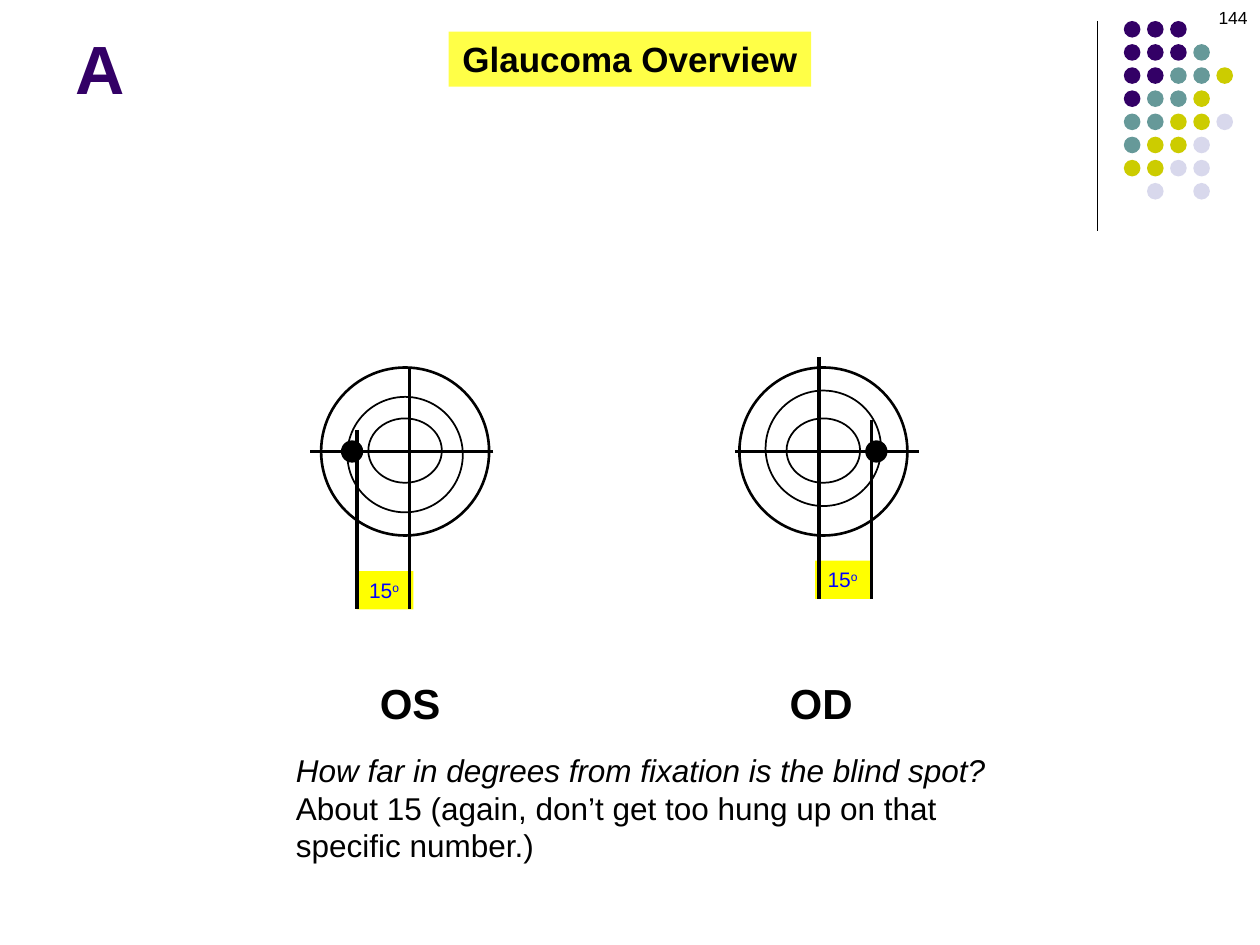
from lxml.etree import SubElement
from pptx import Presentation
from pptx.dml.color import RGBColor
from pptx.enum.shapes import MSO_CONNECTOR as Connector, MSO_SHAPE as Shape
from pptx.enum.text import MSO_ANCHOR as Anchor, MSO_AUTO_SIZE as AutoSize, PP_ALIGN as Align
from pptx.oxml.ns import qn
from pptx.util import Pt

THEME = {
    "font": "Arial", "ink": "000000", "purple": "330066", "teal": "669999",
    "olive": "CCCC00", "mist": "D8D8EC", "yellow": "FFFF00", "banner": "FFFF47",
    "blue": "0000FF",
    "title": 39, "eye": 24, "heading": 20, "body": 18, "angle": 12, "number": 10,
}

TITLE, HEADING, PAGE_NUMBER = "A", "Glaucoma Overview", "144"
QUESTION = "How far in degrees from fixation is the blind spot?"
ANSWER = "About 15 (again, don’t get too hung up on that specific number.)"
ANGLE, DEGREE = "15", "o"

# side is -1 where the blind spot lies left of fixation, +1 where it lies right
EYES = [
    {"name": "OS", "side": -1, "axis": 234, "rise": 0, "name_box": (210, 383.8, 50, 36.4)},
    {"name": "OD", "side": 1, "axis": 468, "rise": 6, "name_box": (444.2, 383.8, 51, 36.4)},
]
MERIDIAN = 258

DOT_COLOURS = {"P": "purple", "T": "teal", "O": "olive", "M": "mist"}
DOT_ROWS = ["PPP", "PPPT", "PPTTO", "PTTO", "TTOOM", "TOOM", "OOMM", " M M"]
DOT_LEFT, DOT_TOP, DOT_STEP, DOT_SIZE = 642.2, 12, 13.22, 9.5


def colour(name):
    return RGBColor.from_string(THEME[name])


def points(*lengths):
    return [Pt(length) for length in lengths]


def add_line(page, start, end, weight=2.25):
    line = page.shapes.add_connector(Connector.STRAIGHT, *points(*start, *end))
    line.line.color.rgb = colour("ink")
    line.line.width = Pt(weight)
    SubElement(line._element.spPr, qn("a:effectLst"))


def add_filled(page, kind, frame, fill=None, weight=0):
    shape = page.shapes.add_shape(kind, *points(*frame))
    shape.shadow.inherit = False
    if fill:
        shape.fill.solid()
        shape.fill.fore_color.rgb = colour(fill)
    else:
        shape.fill.background()
    if weight:
        shape.line.color.rgb = colour("ink")
        shape.line.width = Pt(weight)
    else:
        shape.line.fill.background()
    return shape


def add_ellipse(page, centre, width, height, **style):
    x, y = centre
    add_filled(page, Shape.OVAL, (x - width / 2, y - height / 2, width, height), **style)


def write(box, paragraphs, size, ink="ink", bold=False, align=Align.LEFT,
          anchor=Anchor.TOP, wrap=False, grow=True):
    """Fill box with paragraphs, each a list of (text, format) spans."""
    frame = box.text_frame
    frame.word_wrap = wrap
    frame.auto_size = AutoSize.SHAPE_TO_FIT_TEXT if grow else AutoSize.NONE
    frame.vertical_anchor = anchor
    for index, spans in enumerate(paragraphs):
        para = frame.add_paragraph() if index else frame.paragraphs[0]
        para.alignment = align
        for text, style in spans:
            span = para.add_run()
            span.text = text
            font = span.font
            font.name, font.size, font.bold = THEME["font"], Pt(THEME[size]), bold
            font.italic = style == "italic"
            font.color.rgb = colour(ink)
            if style == "superscript":
                span._r.get_or_add_rPr().set("baseline", "30000")


def add_text(page, frame, paragraphs, **style):
    write(page.shapes.add_textbox(*points(*frame)), paragraphs, **style)


def add_dots(page):
    for row, letters in enumerate(DOT_ROWS):
        for column, letter in enumerate(letters):
            if letter in DOT_COLOURS:
                frame = (DOT_LEFT + column * DOT_STEP, DOT_TOP + row * DOT_STEP,
                         DOT_SIZE, DOT_SIZE)
                add_filled(page, Shape.OVAL, frame, fill=DOT_COLOURS[letter])


def add_visual_field(page, eye):
    side, axis, rise = eye["side"], eye["axis"], eye["rise"]
    centre = axis + side * 2.5
    add_line(page, (axis, 210 - rise), (axis, 312 - rise))
    for near, far in ((48, 54), (45, 57)):
        add_line(page, (axis - side * near, MERIDIAN), (axis + side * far, MERIDIAN))
    add_ellipse(page, (axis + side * 32.8, MERIDIAN), 12, 12, fill="ink", weight=0.75)
    add_ellipse(page, (centre, MERIDIAN), 96, 96, weight=1.5)
    add_ellipse(page, (centre, MERIDIAN - 0.5), 42, 36.8, weight=1)
    add_ellipse(page, (centre, MERIDIAN - side * 1.8), 66, 66, weight=1)

    label = add_filled(page, Shape.RECTANGLE,
                       (axis + side * 14 - 16.2, 326.4 - rise, 32.4, 21.8), fill="yellow")
    write(label, [[(ANGLE, None), (DEGREE, "superscript")]], size="angle", ink="blue")
    for x in (axis, axis + side * 30):
        add_line(page, (x, 246 - rise), (x, 348 - rise))
    add_text(page, eye["name_box"], [[(eye["name"], None)]], size="eye", bold=True)


def main():
    deck = Presentation()
    deck.slide_width, deck.slide_height = points(720, 540)
    page = deck.slides.add_slide(deck.slide_layouts[5])

    add_line(page, (627, 12), (627, 132), weight=0.75)
    add_dots(page)
    add_text(page, (552, 0.7, 168, 36), [[(PAGE_NUMBER, None)]], size="number",
             align=Align.RIGHT, wrap=True, grow=False)
    for eye in EYES:
        add_visual_field(page, eye)
    add_text(page, (162, 425.5, 412, 72.7), [[(QUESTION, "italic")], [(ANSWER, None)]],
             size="body", wrap=True)
    banner = add_filled(page, Shape.RECTANGLE, (256.4, 18, 207.2, 31.5), fill="banner")
    write(banner, [[(HEADING, None)]], size="heading", bold=True, align=Align.CENTER)

    title = page.shapes.title
    title.left, title.top, title.width, title.height = points(36, 9.4, 594, 56)
    write(title, [[(TITLE, None)]], size="title", ink="purple", bold=True,
          anchor=Anchor.BOTTOM, wrap=True, grow=False)
    deck.save("out.pptx")


if __name__ == "__main__":
    main()
